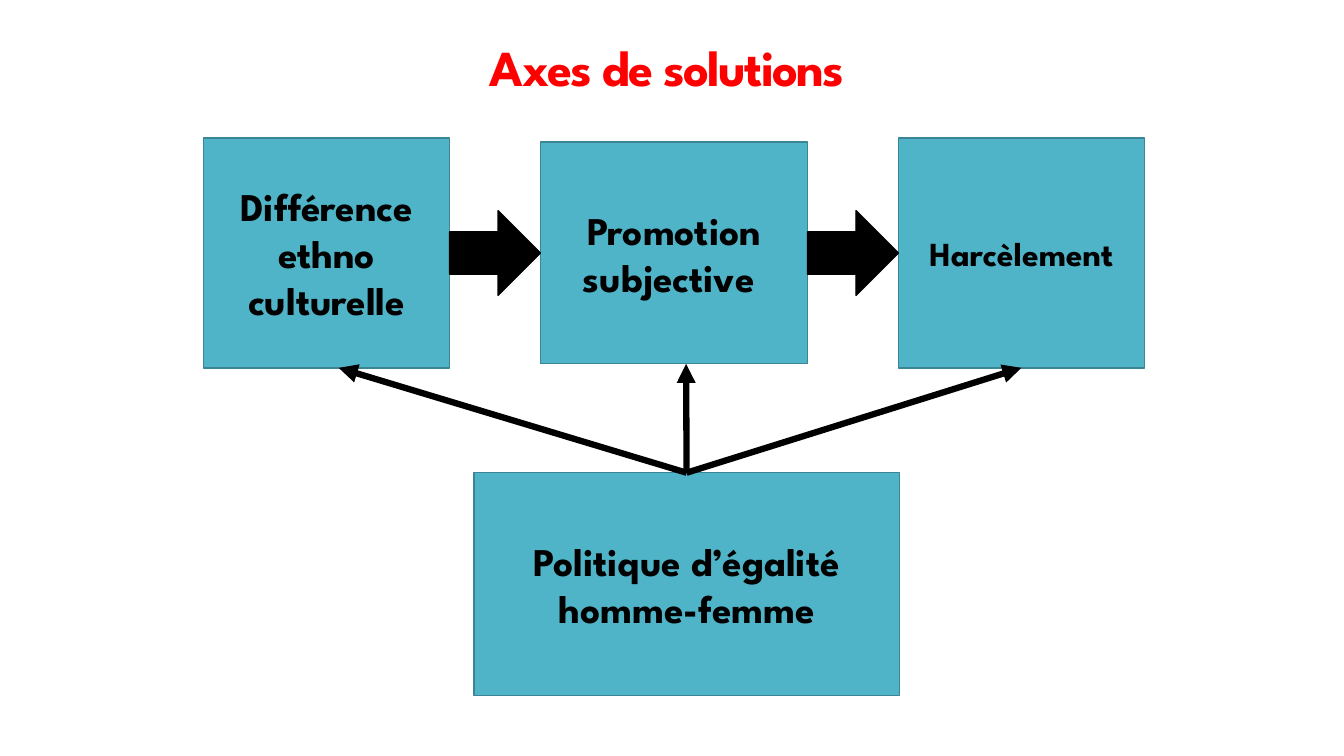
from dataclasses import dataclass

from pptx import Presentation
from pptx.dml.color import RGBColor
from pptx.enum import shapes, text
from pptx.oxml.ns import qn
from pptx.util import Inches, Pt


@dataclass(frozen=True)
class Theme:
    font: str = "League Spartan"
    title: str = "FF0000"
    ink: str = "000000"
    box: str = "50B4C8"
    border: str = "3B8594"
    title_size: float = 36
    large: float = 28
    small: float = 24
    border_width: float = 1
    link_width: float = 4.5


THEME = Theme()
TOP, BOTTOM = 0, 2  # connection sites of a rectangle


def rgb(value):
    return RGBColor.from_string(value)


def write(tf, content, size, color=THEME.ink, spacing=None, tracking=None):
    """Fill a text frame with one centred, bold paragraph."""
    tf.word_wrap = True
    tf.auto_size = text.MSO_AUTO_SIZE.NONE
    tf.vertical_anchor = text.MSO_ANCHOR.MIDDLE
    p = tf.paragraphs[0]
    p.alignment = text.PP_ALIGN.CENTER
    if spacing:
        p.line_spacing = spacing
    r = p.add_run()
    r.text = content
    r.font.name, r.font.size, r.font.bold = THEME.font, Pt(size), True
    r.font.color.rgb = rgb(color)
    if tracking:
        r.font._element.set("spc", str(round(tracking * 100)))


def add_block(s, kind, box, fill, border):
    sp = s.shapes.add_shape(kind, *map(Inches, box))
    sp.shadow.inherit = False
    sp.fill.solid()
    sp.fill.fore_color.rgb = rgb(fill)
    sp.line.color.rgb = rgb(border)
    sp.line.width = Pt(THEME.border_width)
    return sp


def add_box(s, box, content, size=THEME.large):
    sp = add_block(s, shapes.MSO_SHAPE.RECTANGLE, box, THEME.box, THEME.border)
    write(sp.text_frame, content, size)
    return sp


def add_link(s, source, x, y):
    """Draw an arrow from the top of source to a point in EMU."""
    link = s.shapes.add_connector(shapes.MSO_CONNECTOR.STRAIGHT, 0, 0, x, y)
    link.begin_connect(source, TOP)
    link.line.color.rgb = rgb(THEME.ink)
    link.line.width = Pt(THEME.link_width)
    ln = link.line._get_or_add_ln()
    ln.append(ln.makeelement(qn("a:tailEnd"), {"type": "triangle"}))
    props = link._element.spPr
    props.append(props.makeelement(qn("a:effectLst"), {}))
    return link


def add_title(s, box, content):
    sp = s.shapes.title
    sp.left, sp.top, sp.width, sp.height = map(Inches, box)
    write(sp.text_frame, content, THEME.title_size, THEME.title,
          spacing=0.85, tracking=-1.2)


def add_issues(s, box):
    """Three issues in a row, with a block arrow in each gap."""
    x, y, w, h = box
    side, middle, inset = 2.44, 2.65, 0.04
    gap = (w - 2 * side - middle) / 2
    x_middle = x + side + gap
    x_last = x + w - side
    issues = [
        add_box(s, (x, y, side, h), "Différence ethno culturelle"),
        add_box(s, (x_middle, y + inset, middle, h - 2 * inset),
                "Promotion subjective "),
        add_box(s, (x_last, y, side, h), "Harcèlement", THEME.small),
    ]
    arrow_h = 0.84
    for right in (x_middle, x_last):
        add_block(s, shapes.MSO_SHAPE.RIGHT_ARROW,
                  (right - gap, y + (h - arrow_h) / 2, gap, arrow_h),
                  THEME.ink, THEME.ink)
    return issues


def add_policy(s, box, issues):
    """The policy, with an arrow to each issue above it."""
    policy = add_box(s, box, "Politique d’égalité homme-femme")
    first, middle, last = issues
    shift = Inches(0.12)  # the first two arrows land right of centre
    for issue, offset in ((first, shift), (middle, shift), (last, 0)):
        link = add_link(s, policy, issue.left + issue.width // 2 + offset,
                        issue.top + issue.height)
        if not offset:
            link.end_connect(issue, BOTTOM)


def main():
    prs = Presentation()
    prs.slide_width, prs.slide_height = Inches(13.33), Inches(7.5)
    s = prs.slides.add_slide(prs.slide_layouts[5])
    add_title(s, (2.18, 0.29, 8.99, 0.84), "Axes de solutions ")
    issues = add_issues(s, (2.02, 1.37, 9.33, 2.28))
    add_policy(s, (4.7, 4.69, 4.22, 2.21), issues)
    prs.save("out.pptx")


if __name__ == "__main__":
    main()
